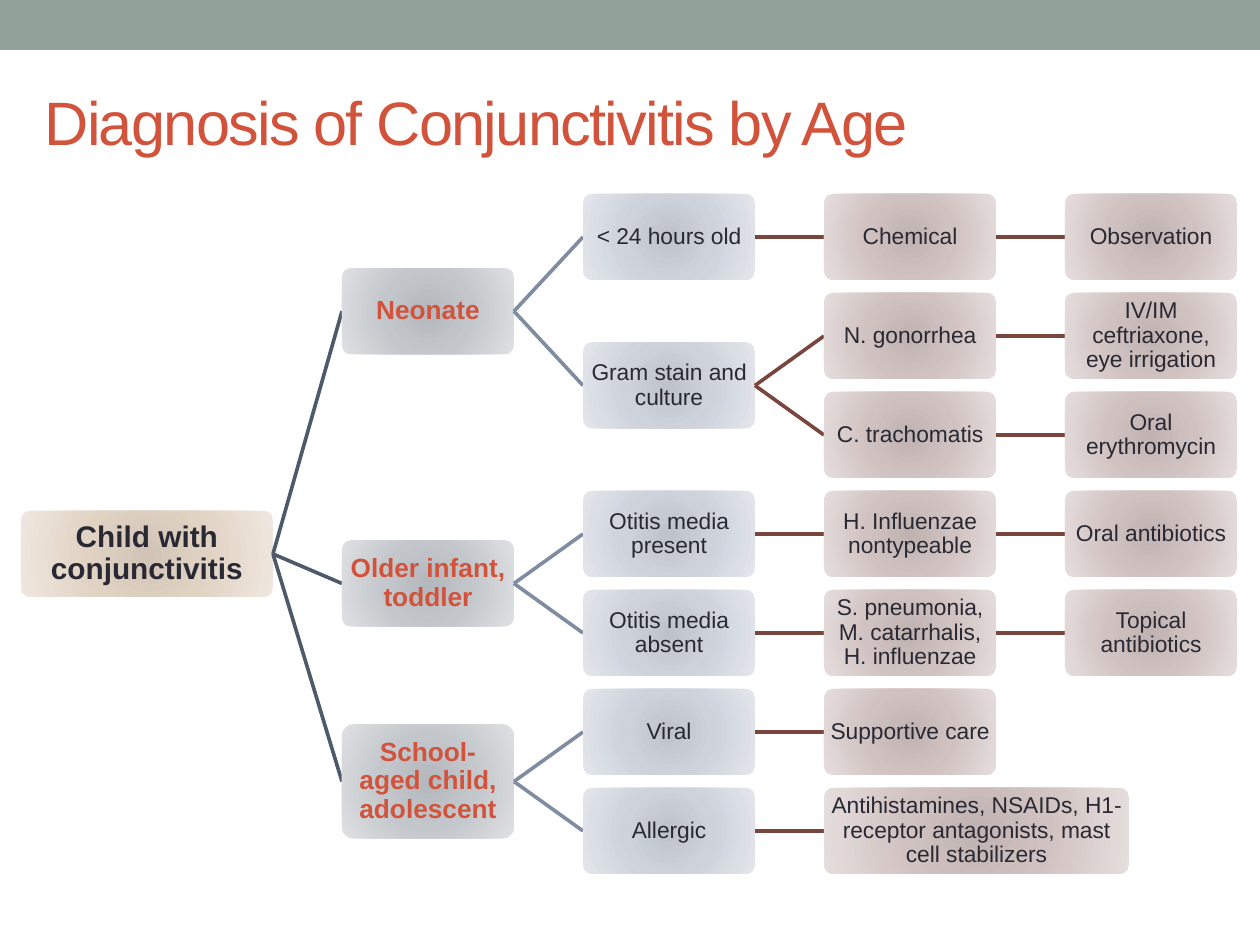
from dataclasses import dataclass
from itertools import count

from lxml import etree
from pptx import Presentation
from pptx.dml.color import RGBColor
from pptx.enum.shapes import MSO_CONNECTOR, MSO_SHAPE
from pptx.enum.text import MSO_ANCHOR, PP_ALIGN
from pptx.oxml import parse_xml
from pptx.oxml.ns import nsdecls, qn
from pptx.util import Pt

RECTANGLE = MSO_SHAPE.RECTANGLE
ROUNDED = MSO_SHAPE.ROUNDED_RECTANGLE
STRAIGHT = MSO_CONNECTOR.STRAIGHT
MIDDLE = MSO_ANCHOR.MIDDLE
LEFT, CENTER = PP_ALIGN.LEFT, PP_ALIGN.CENTER

FONT = "Arial"
RED, DARK, SAGE = "D2533C", "292934", "93A299"
BOX_WIDTH, BOX_HEIGHT = 172, 86
COLUMN_GAP, ROW_PITCH = 69, 99
STOPS = (0, 45, 100)


@dataclass
class Level:
    gradient: tuple
    size: int
    text_color: str = DARK
    bold: bool = False
    line_color: str = ""


@dataclass
class Node:
    text: str
    children: tuple = ()
    width: int = BOX_WIDTH
    height: int = BOX_HEIGHT
    middle: int = 0


OUTCOME = Level(("C0B3B1", "D0C2C0", "E5DEDD"), 13, line_color="79463D")
LEVELS = (
    Level(("D1C4B6", "E1D3C4", "EFE7DF"), 17, bold=True),
    Level(("B4B7BC", "C3C7CB", "DFE0E3"), 15, RED, True, "4C5A6A"),
    Level(("BEC3CB", "CDD2DB", "E3E6EB"), 13, line_color="808DA0"),
    OUTCOME,
    OUTCOME,
)


def chain(*texts):
    """Nest texts so that each one leads to the next."""
    first, *rest = texts
    return Node(first, (chain(*rest),) if rest else ())


DIAGNOSIS = Node("Child with conjunctivitis", (
    Node("Neonate", (
        chain("< 24 hours old", "Chemical", "Observation"),
        Node("Gram stain and culture", (
            chain("N. gonorrhea", "IV/IM ceftriaxone, eye irrigation"),
            chain("C. trachomatis", "Oral erythromycin"),
        )),
    )),
    Node("Older infant, toddler", (
        chain("Otitis media present", "H. Influenzae nontypeable", "Oral antibiotics"),
        chain("Otitis media absent", "S. pneumonia, M. catarrhalis, H. influenzae",
              "Topical antibiotics"),
    )),
    Node("School-aged child, adolescent", (
        chain("Viral", "Supportive care"),
        Node("Allergic", (
            Node("Antihistamines, NSAIDs, H1-receptor antagonists, mast cell stabilizers",
                 width=305),
        )),
    ), height=114),
), width=252, middle=360)


def px(length):
    return round(length * 914400 / 126)


def rgb(color):
    return RGBColor.from_string(color)


def format_text(text_frame, size, color, bold, alignment):
    text_frame.word_wrap = True
    text_frame.vertical_anchor = MIDDLE
    paragraph = text_frame.paragraphs[0]
    paragraph.alignment = alignment
    for run in paragraph.runs:
        run.font.name = FONT
        run.font.size = Pt(size)
        run.font.bold = bold
        run.font.color.rgb = rgb(color)


def fill_radial(shape, colors):
    stops = "".join(
        f'<a:gs pos="{stop * 1000}"><a:srgbClr val="{color}"/></a:gs>'
        for stop, color in zip(STOPS, colors)
    )
    shape.element.spPr.append(parse_xml(
        f'<a:gradFill {nsdecls("a")} rotWithShape="1"><a:gsLst>{stops}</a:gsLst>'
        '<a:path path="circle"><a:fillToRect l="100000" t="100000" r="100000" b="100000"/>'
        "</a:path></a:gradFill>"
    ))


def add_header(slide, left, top, width, height):
    bar = slide.shapes.add_shape(RECTANGLE, px(left), px(top), px(width), px(height))
    bar.shadow.inherit = False
    bar.fill.solid()
    bar.fill.fore_color.rgb = rgb(SAGE)
    bar.line.fill.background()


def add_title(slide, text, left, top, width, height):
    title = slide.shapes.title
    title.left, title.top, title.width, title.height = map(px, (left, top, width, height))
    title.text_frame.text = text
    format_text(title.text_frame, 35, RED, False, LEFT)
    title.text_frame.paragraphs[0].runs[0].font._element.set("spc", "-100")


def add_box(slide, node, level, left, middle):
    box = slide.shapes.add_shape(
        ROUNDED, px(left), px(middle - node.height / 2), px(node.width), px(node.height))
    box.adjustments[0] = 0.1
    fill_radial(box, level.gradient)
    box.line.fill.background()
    box.shadow.inherit = False
    frame = box.text_frame
    frame.margin_left = frame.margin_right = px(4)
    frame.margin_top = frame.margin_bottom = px(4)
    frame.text = node.text
    format_text(frame, level.size, level.text_color, level.bold, CENTER)
    frame.paragraphs[0].line_spacing = 0.9


def add_branch(slide, start, end, color):
    line = slide.shapes.add_connector(STRAIGHT, *map(px, (*start, *end)))
    line.line.color.rgb = rgb(color)
    line.line.width = Pt(2.08)
    etree.SubElement(line.element.spPr, qn("a:effectLst"))


def set_middles(node, rows):
    """Give each leaf the next row and centre each parent on its children."""
    for child in node.children:
        set_middles(child, rows)
    if not node.children:
        node.middle = BOX_HEIGHT / 2 + next(rows) * ROW_PITCH
    elif not node.middle:
        node.middle = (node.children[0].middle + node.children[-1].middle) / 2


def add_tree(slide, node, left, top, depth=0):
    middle = top + node.middle
    right = left + node.width
    add_box(slide, node, LEVELS[depth], left, middle)
    for child in node.children:
        child_left = right + COLUMN_GAP
        add_branch(slide, (right, middle), (child_left, top + child.middle),
                   LEVELS[depth + 1].line_color)
        add_tree(slide, child, child_left, top, depth + 1)


def main():
    presentation = Presentation()
    presentation.slide_width, presentation.slide_height = px(1260), px(945)
    slide = presentation.slides.add_slide(presentation.slide_layouts[5])
    add_header(slide, 0, 0, 1260, 50)
    add_title(slide, "Diagnosis of Conjunctivitis by Age", 32, 53, 1134, 136)
    set_middles(DIAGNOSIS, count())
    add_tree(slide, DIAGNOSIS, 21, 194)
    presentation.save("out.pptx")


if __name__ == "__main__":
    main()
